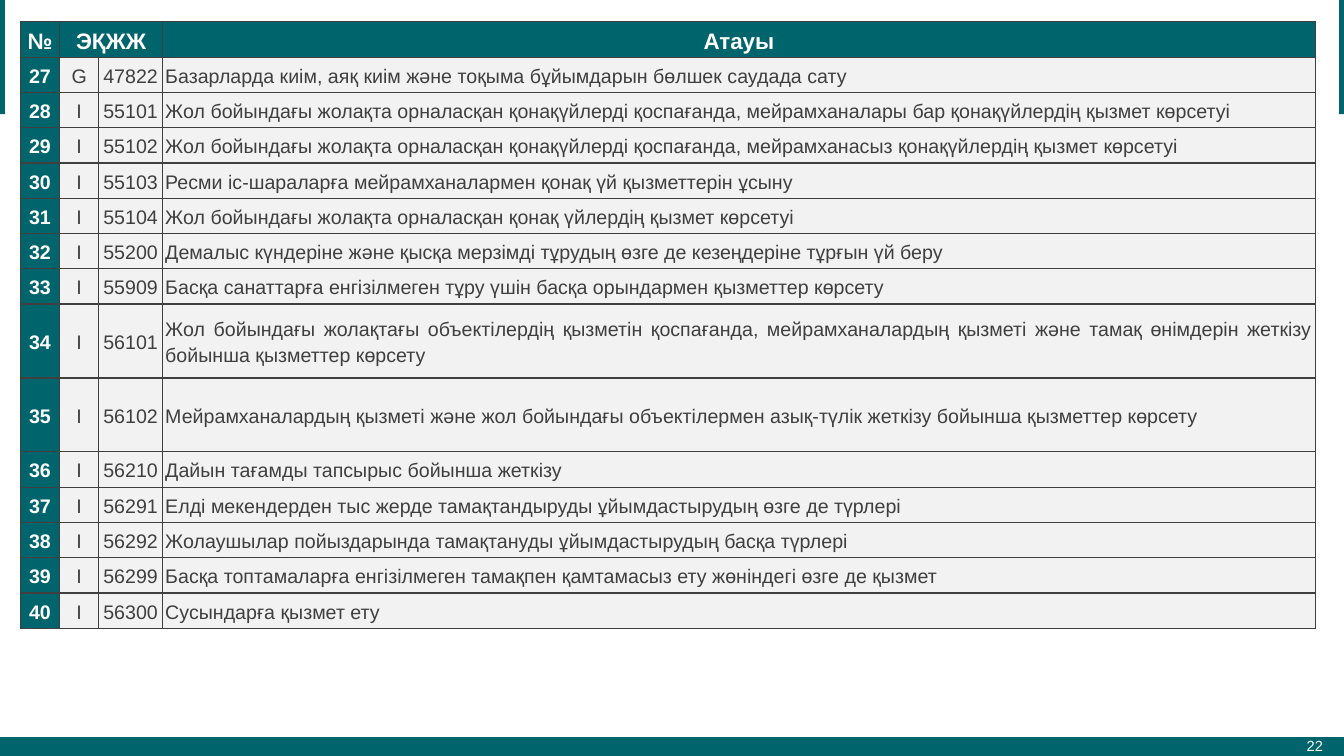
"""Build the slide with the table of activity codes 27 to 40."""
from lxml.etree import SubElement
from pptx import Presentation
from pptx.dml.color import RGBColor
from pptx.enum.shapes import MSO_SHAPE
from pptx.enum.text import MSO_ANCHOR, PP_ALIGN
from pptx.oxml.ns import qn
from pptx.util import Pt

COLORS = {"teal": "00646C", "white": "FFFFFF", "dark": "3F3F3F", "light": "F2F2F2"}
HEADINGS = ("№", "ЭҚЖЖ", "", "Атауы")
FIRST_NUMBER = 27
ACTIVITIES = [
    ("G", "47822", "Базарларда киім, аяқ киім және тоқыма бұйымдарын бөлшек саудада сату"),
    ("I", "55101", "Жол бойындағы жолақта орналасқан қонақүйлерді қоспағанда, "
                   "мейрамханалары бар қонақүйлердің қызмет көрсетуі"),
    ("I", "55102", "Жол бойындағы жолақта орналасқан қонақүйлерді қоспағанда, "
                   "мейрамханасыз қонақүйлердің қызмет көрсетуі"),
    ("I", "55103", "Ресми іс-шараларға мейрамханалармен қонақ үй қызметтерін ұсыну"),
    ("I", "55104", "Жол бойындағы жолақта орналасқан қонақ үйлердің қызмет көрсетуі"),
    ("I", "55200", "Демалыс күндеріне және қысқа мерзімді тұрудың өзге де кезеңдеріне тұрғын үй беру"),
    ("I", "55909", "Басқа санаттарға енгізілмеген тұру үшін басқа орындармен қызметтер көрсету"),
    ("I", "56101", "Жол бойындағы жолақтағы объектілердің қызметін қоспағанда, мейрамханалардың "
                   "қызметі және тамақ өнімдерін жеткізу бойынша қызметтер көрсету"),
    ("I", "56102", "Мейрамханалардың қызметі және жол бойындағы объектілермен азық-түлік "
                   "жеткізу бойынша қызметтер көрсету"),
    ("I", "56210", "Дайын тағамды тапсырыс бойынша жеткізу"),
    ("I", "56291", "Елді мекендерден тыс жерде тамақтандыруды ұйымдастырудың өзге де түрлері"),
    ("I", "56292", "Жолаушылар пойыздарында тамақтануды ұйымдастырудың басқа түрлері"),
    ("I", "56299", "Басқа топтамаларға енгізілмеген тамақпен қамтамасыз ету жөніндегі өзге де қызмет"),
    ("I", "56300", "Сусындарға қызмет ету"),
]
COLUMN_WIDTHS = (28, 28, 45.5, 823.5)
ROW_HEIGHT, TALL_HEIGHT = 25.2, 52.8
TALL_CODES = ("56101", "56102")


def style_paragraph(para, size, color, align, bold=False):
    para.alignment = align
    para.font.name = "Arial"
    para.font.size = Pt(size)
    para.font.bold = bold
    para.font.color.rgb = RGBColor.from_string(COLORS[color])


def add_borders(cell):
    properties = cell._tc.get_or_add_tcPr()
    for side in ("lnL", "lnR", "lnT", "lnB"):
        line = SubElement(properties, qn(f"a:{side}"), w=str(Pt(1)))
        fill = SubElement(line, qn("a:solidFill"))
        SubElement(fill, qn("a:srgbClr"), val=COLORS["dark"])


deck = Presentation()
deck.slide_width, deck.slide_height = Pt(960), Pt(540)
page = deck.slides.add_slide(deck.slide_layouts[6])

for left, top, width, height in ((0, 526.5, 960, 13.5), (0, -1, 3.5, 82.5), (956.5, -1, 3.5, 82.5)):
    bar = page.shapes.add_shape(MSO_SHAPE.RECTANGLE, Pt(left), Pt(top), Pt(width), Pt(height))
    bar.shadow.inherit = False
    bar.fill.solid()
    bar.fill.fore_color.rgb = RGBColor.from_string(COLORS["teal"])
    bar.line.fill.background()

number_box = page.shapes.add_textbox(Pt(858), Pt(518.5), Pt(93), Pt(28.8))
frame = number_box.text_frame
frame.word_wrap = True
frame.vertical_anchor = MSO_ANCHOR.MIDDLE
frame.margin_left = frame.margin_right = Pt(6)
frame.margin_top = frame.margin_bottom = Pt(3)
frame.text = "22"
style_paragraph(frame.paragraphs[0], 10.5, "white", PP_ALIGN.RIGHT)

rows = [HEADINGS] + [(str(number), *activity)
                     for number, activity in enumerate(ACTIVITIES, FIRST_NUMBER)]
heights = [TALL_HEIGHT if row[2] in TALL_CODES else ROW_HEIGHT for row in rows]
table = page.shapes.add_table(len(rows), len(COLUMN_WIDTHS), Pt(14.6), Pt(15.6),
                              Pt(sum(COLUMN_WIDTHS)), Pt(sum(heights))).table
for column, width in zip(table.columns, COLUMN_WIDTHS):
    column.width = Pt(width)

for row_index, (row, height) in enumerate(zip(rows, heights)):
    table.rows[row_index].height = Pt(height)
    for column_index, text in enumerate(row):
        is_header = row_index == 0
        is_teal = is_header or column_index == 0
        is_name = column_index == 3 and not is_header
        cell = table.cell(row_index, column_index)
        add_borders(cell)
        cell.fill.solid()
        cell.fill.fore_color.rgb = RGBColor.from_string(COLORS["teal" if is_teal else "light"])
        cell.vertical_anchor = MSO_ANCHOR.MIDDLE
        cell.margin_left = cell.margin_right = Pt(2)
        cell.margin_top = cell.margin_bottom = Pt(0)
        cell.text = text
        para = cell.text_frame.paragraphs[0]
        para.line_spacing = 1.15
        style_paragraph(para, 16 if is_header else 14, "white" if is_teal else "dark",
                        PP_ALIGN.JUSTIFY if is_name else PP_ALIGN.CENTER, is_teal)
table.cell(0, 1).merge(table.cell(0, 2))

deck.save("out.pptx")
